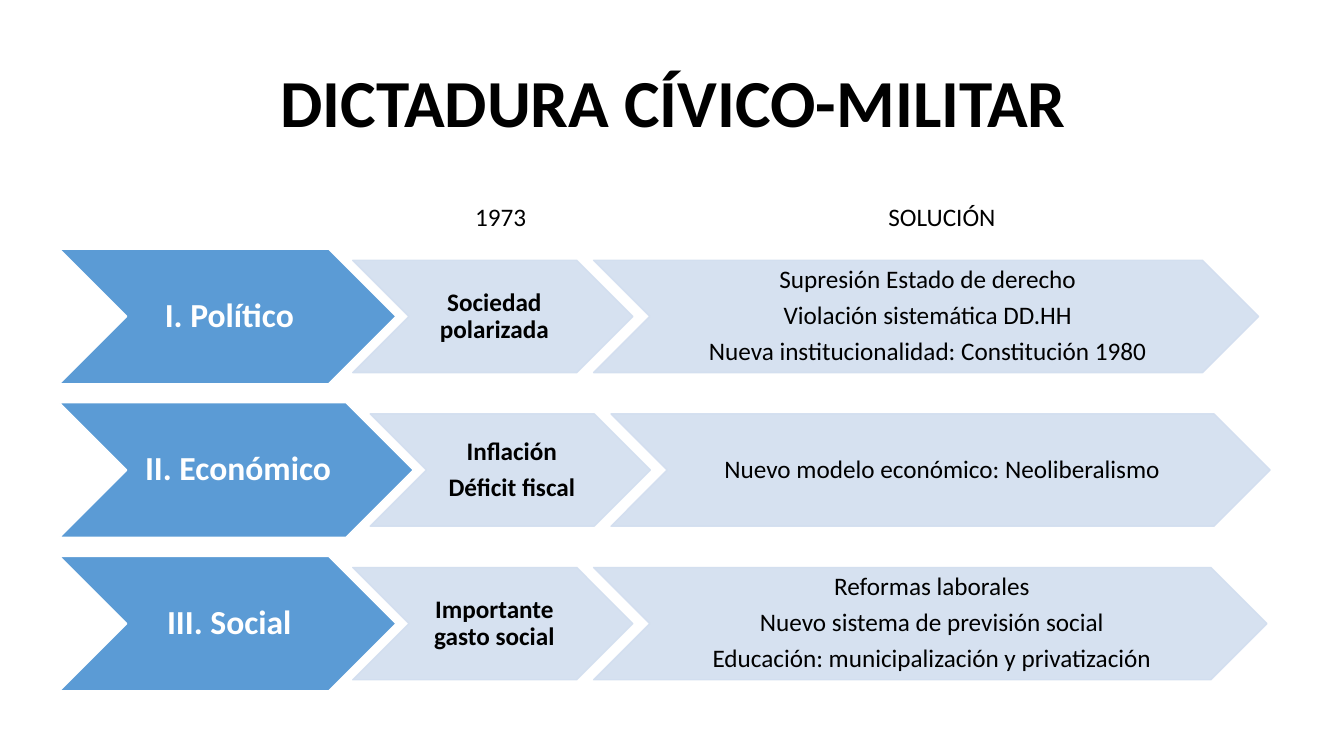
from lxml import etree
from pptx import Presentation
from pptx.dml.color import RGBColor
from pptx.enum import shapes, text
from pptx.oxml.ns import qn
from pptx.util import Cm, Pt

BLUE = RGBColor(0x5B, 0x9B, 0xD5)
PALE = RGBColor(0xD2, 0xDE, 0xEF)
WHITE = RGBColor(0xFF, 0xFF, 0xFF)
BLACK = RGBColor(0, 0, 0)

LEFT, TOP, ROW_STEP = 1.5, 6.28, 3.87
AREA_H, STEP_H, STEP_W = 3.39, 2.83, 7.06
AREA_OVERLAP, STEP_OVERLAP = 1.09, 0.99

# area, its chevron width, situation in 1973, solution, solution chevron width
ROWS = [
    ("I. Político", 8.48, ["Sociedad polarizada"],
     ["Supresión Estado de derecho", "Violación sistemática DD.HH",
      "Nueva institucionalidad: Constitución 1980"], 16.76),
    ("II. Económico", 8.92, ["Inflación", "Déficit fiscal"],
     ["Nuevo modelo económico: Neoliberalismo"], 16.61),
    ("III. Social", 8.48, ["Importante gasto social"],
     ["Reformas laborales", "Nuevo sistema de previsión social",
      "Educación: municipalización y privatización"], 16.97),
]
# wording, left, top, width, height, size, bold
HEADINGS = [
    ("1973", 10.57, 4.95, 4.09, 1.02, 18, False),
    ("SOLUCIÓN", 21.29, 4.95, 4.9, 1.02, 18, False),
    ("DICTADURA CÍVICO-MILITAR", 5.03, 1.4, 23.88, 2.31, 48, True),
]

prs = Presentation()
prs.slide_width, prs.slide_height = Cm(33.87), Cm(19.05)
s = prs.slides.add_slide(prs.slide_layouts[6])


def add_line(p, line, size, bold, color):
    p.alignment = text.PP_ALIGN.CENTER
    r = p.add_run()
    r.text = line
    r.font.name, r.font.size, r.font.bold = "Calibri", Pt(size), bold
    r.font.color.rgb = color


def add_chevron(left, top, width, height, lines, bold=True, main=False):
    """Add a chevron; a main one is solid blue, the others pale and translucent."""
    sp = s.shapes.add_shape(shapes.MSO_SHAPE.CHEVRON,
                            Cm(left), Cm(top), Cm(width), Cm(height))
    sp.shadow.inherit = False
    sp.fill.solid()
    sp.fill.fore_color.rgb = BLUE if main else PALE
    sp.line.color.rgb = WHITE if main else PALE
    sp.line.width = Pt(1)
    if not main:
        for color in sp._element.spPr.iter(qn("a:srgbClr")):
            etree.SubElement(color, qn("a:alpha")).set("val", "90000")
    tf = sp.text_frame
    tf.word_wrap = True
    tf.vertical_anchor = text.MSO_ANCHOR.MIDDLE
    tf.margin_left, tf.margin_right = Cm(0.08), 0
    tf.margin_top = tf.margin_bottom = Cm(0.04)
    size = 24 if main else 18
    for i, line in enumerate(lines):
        p = tf.add_paragraph() if i else tf.paragraphs[0]
        p.line_spacing = 0.9
        p.space_after = Pt(0.35 * size)
        add_line(p, line, size, bold, WHITE if main else BLACK)


for row, (area, area_w, situation, solution, solution_w) in enumerate(ROWS):
    top = TOP + row * ROW_STEP
    step_top = top + (AREA_H - STEP_H) / 2
    situation_left = LEFT + area_w - AREA_OVERLAP
    solution_left = situation_left + STEP_W - STEP_OVERLAP
    add_chevron(LEFT, top, area_w, AREA_H, [area], main=True)
    add_chevron(situation_left, step_top, STEP_W, STEP_H, situation)
    add_chevron(solution_left, step_top, solution_w, STEP_H, solution, bold=False)

for heading, left, top, width, height, size, bold in HEADINGS:
    tf = s.shapes.add_textbox(Cm(left), Cm(top), Cm(width), Cm(height)).text_frame
    tf.word_wrap = True
    tf.auto_size = text.MSO_AUTO_SIZE.SHAPE_TO_FIT_TEXT
    add_line(tf.paragraphs[0], heading, size, bold, BLACK)

prs.save("out.pptx")
